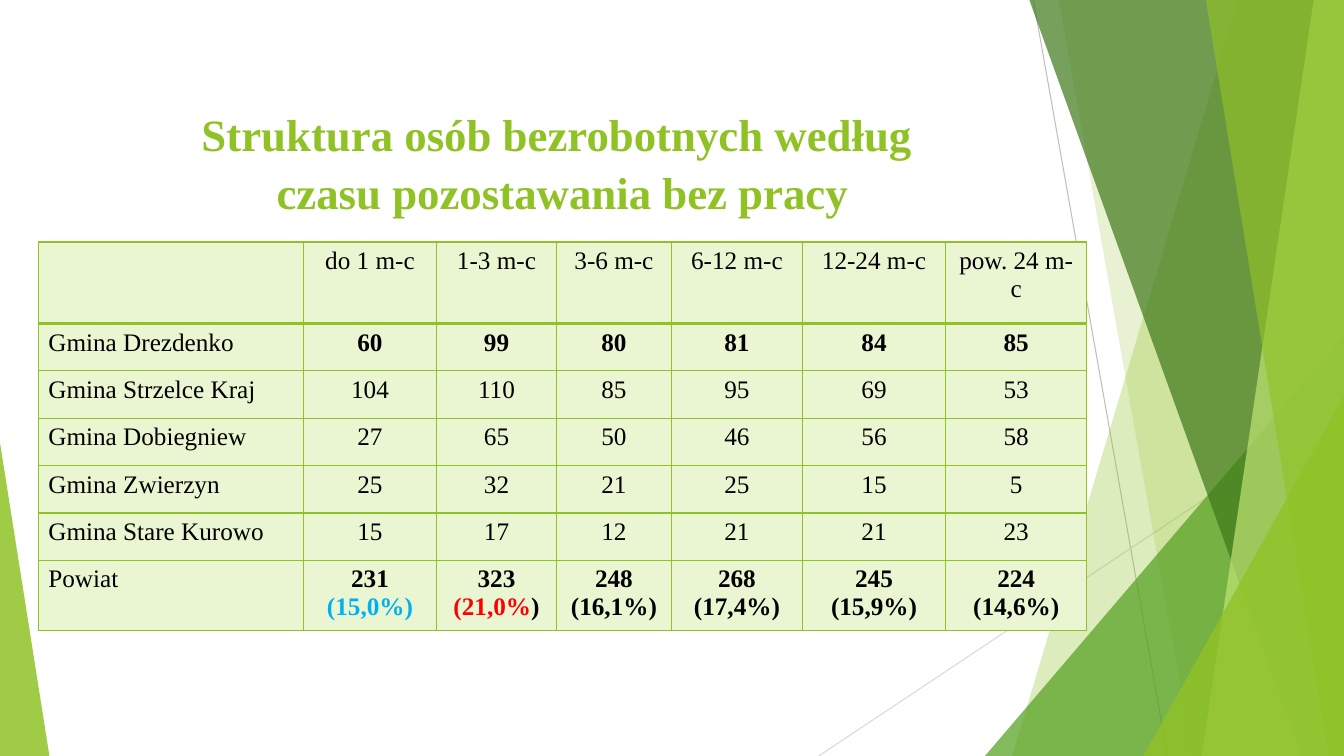
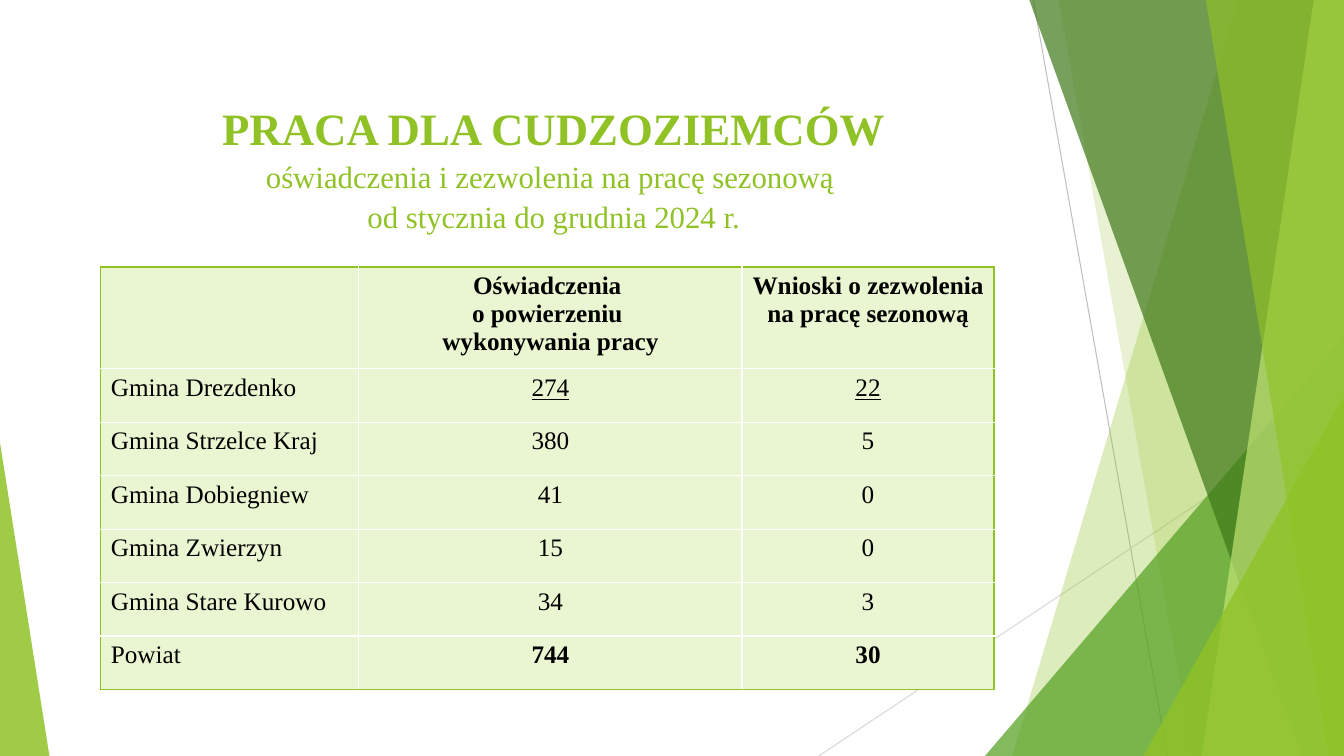
import dataclasses

import lxml.etree
import pptx
import pptx.dml.color
import pptx.enum.shapes
import pptx.enum.text
import pptx.oxml.ns
import pptx.util

COLORS = {
    "lime": "90C226", "green": "54A021", "forest": "3F7819", "pale": "C0E474",
    "cell": "EAF6D1", "white": "FFFFFF", "black": "000000",
    "blue": "00B0F0", "red": "FF0000", "grey": "BFBFBF", "silver": "D9D9D9",
}
FONT = "Times New Roman"
CENTER = pptx.enum.text.PP_ALIGN.CENTER
LEFT = pptx.enum.text.PP_ALIGN.LEFT
qn = pptx.oxml.ns.qn

RAYS = [((76.89, 0), (86.87, 100), "grey"), ((100, 53.73), (60.92, 100), "silver")]
FACETS = [
    ("band", 92.12, 75.32, "lime", 30),
    ("band", 78.77, 88.75, "lime", 20),
    ("corner", (73.29, 44.4, 26.71, 55.6), 1, "green", 72),
    ("band", 76.59, 96.85, "forest", 70),
    ("band", 97.75, 89.42, "pale", 70),
    ("band", 89.72, 98.87, "lime", 65),
    ("corner", (85.07, 52.4, 14.93, 47.6), 1, "lime", 80),
    ("corner", (0, 58.53, 3.68, 41.47), 0, "lime", 85),
]


@dataclasses.dataclass
class Box:
    left: int
    top: int
    width: int
    height: int

    def point(self, x, y):
        return (round(self.left + self.width * x / 100),
                round(self.top + self.height * y / 100))

    def area(self, x, y, width, height):
        return Box(*self.point(x, y), round(self.width * width / 100),
                   round(self.height * height / 100))

    def edges(self):
        return self.left, self.top, self.width, self.height


def rgb(name):
    return pptx.dml.color.RGBColor.from_string(COLORS[name])


def style(para, size, color="black", bold=False, underline=False, align=CENTER):
    para.alignment = align
    for span in para.runs:
        span.font.name = FONT
        span.font.size = pptx.util.Pt(size)
        span.font.bold = bold
        span.font.underline = underline
        span.font.color.rgb = rgb(color)


def paint(shape, color, opacity):
    shape.shadow.inherit = False
    shape.line.fill.background()
    shape.fill.solid()
    shape.fill.fore_color.rgb = rgb(color)
    tint = shape.element.spPr.find(".//" + qn("a:srgbClr"))
    lxml.etree.SubElement(tint, qn("a:alpha"), val=str(opacity * 1000))


def add_ray(page, box, start, end, color):
    ray = page.shapes.add_connector(pptx.enum.shapes.MSO_CONNECTOR.STRAIGHT,
                                    *box.point(*start), *box.point(*end))
    ray.line.color.rgb = rgb(color)
    ray.line.width = pptx.util.Pt(0.75)
    lxml.etree.SubElement(ray.element.spPr, qn("a:effectLst"))


def add_band(page, box, top_x, bottom_x):
    outline = page.shapes.build_freeform(*box.point(top_x, 0), scale=1.0)
    outline.add_line_segments(
        [box.point(100, 0), box.point(100, 100), box.point(bottom_x, 100)], close=True)
    return outline.convert_to_shape()


def add_corner(page, box, shares, apex):
    corner = page.shapes.add_shape(
        pptx.enum.shapes.MSO_SHAPE.ISOSCELES_TRIANGLE, *box.area(*shares).edges())
    corner.adjustments[0] = apex
    return corner


def add_backdrop(page, box):
    for start, end, color in RAYS:
        add_ray(page, box, start, end, color)
    makers = {"band": add_band, "corner": add_corner}
    for kind, first, second, color, opacity in FACETS:
        paint(makers[kind](page, box, first, second), color, opacity)


def add_title(page, box, heading, subtitle=""):
    frame = page.shapes.add_textbox(*box.edges()).text_frame
    frame.word_wrap = True
    frame.vertical_anchor = pptx.enum.text.MSO_ANCHOR.TOP
    frame.text = f"{heading}\n{subtitle}" if subtitle else heading
    for index, para in enumerate(frame.paragraphs):
        para.line_spacing = 1.09
        style(para, 22 if index else 32, "lime", bold=index == 0)


def set_borders(cell, borders):
    properties = cell._tc.get_or_add_tcPr()
    for side in "LRTB":
        color, width = borders[side]
        line = lxml.etree.SubElement(properties, qn(f"a:ln{side}"),
                                     w=str(pptx.util.Pt(width)))
        fill = lxml.etree.SubElement(line, qn("a:solidFill"))
        lxml.etree.SubElement(fill, qn("a:srgbClr"), val=COLORS[color])


def add_grid(page, box, rows, columns, heights, inner, header_rule,
             bold_rows, underlined_rows=()):
    grid = page.shapes.add_table(len(rows), len(columns), *box.edges()).table
    grid.first_row = grid.horz_banding = False
    for column, share in zip(grid.columns, columns):
        column.width = round(box.width * share / sum(columns))
    for row, share in zip(grid.rows, heights):
        row.height = round(box.height * share / sum(heights))
    last_row, last_column = len(rows) - 1, len(columns) - 1
    for y, texts in enumerate(rows):
        for x, text in enumerate(texts):
            cell = grid.cell(y, x)
            set_borders(cell, {
                "L": ("lime" if x == 0 else inner, 1),
                "R": ("lime" if x == last_column else inner, 1),
                "T": ("lime" if y == 0 else inner, header_rule if y == 1 else 1),
                "B": ("lime" if y == last_row else inner, header_rule if y == 0 else 1),
            })
            cell.fill.solid()
            cell.fill.fore_color.rgb = rgb("cell")
            cell.text_frame.text = text
            for para in cell.text_frame.paragraphs:
                style(para, 18, bold=x > 0 and y in bold_rows,
                      underline=x > 0 and y in underlined_rows,
                      align=CENTER if x else LEFT)
    return grid


def duration_slide(page, box):
    add_backdrop(page, box)
    add_title(page, box.area(2.85, 12.8, 78.02, 19.2),
              "Struktura osób bezrobotnych według \vczasu pozostawania bez pracy")
    rows = [
        ["", "do 1 m-c", "1-3 m-c", "3-6 m-c", "6-12 m-c", "12-24 m-c", "pow. 24 m-c"],
        ["Gmina Drezdenko", "60", "99", "80", "81", "84", "85"],
        ["Gmina Strzelce Kraj", "104", "110", "85", "95", "69", "53"],
        ["Gmina Dobiegniew", "27", "65", "50", "46", "56", "58"],
        ["Gmina Zwierzyn", "25", "32", "21", "25", "15", "5"],
        ["Gmina Stare Kurowo", "15", "17", "12", "21", "21", "23"],
        ["Powiat", "231\n(15,0%)", "323\n(21,0%", "248\n(16,1%)", "268\n(17,4%)",
         "245\n(15,9%)", "224 (14,6%)"],
    ]
    grid = add_grid(page, box.area(2.85, 32, 78.02, 50.93), rows,
                    [2.63, 1.32, 1.19, 1.14, 1.3, 1.42, 1.4],
                    [0.81] + [0.47] * 5 + [0.66], "lime", 2, bold_rows=(1, 6))
    shortest, longest = (grid.cell(6, x).text_frame.paragraphs[1] for x in (1, 2))
    style(shortest, 18, "blue", bold=True)
    longest.add_run().text = ")"
    style(longest, 18, bold=True)
    longest.runs[0].font.color.rgb = rgb("red")


def foreigners_slide(page, box):
    add_backdrop(page, box)
    add_title(page, box.area(5.93, 12, 70.52, 19.2), "PRACA DLA CUDZOZIEMCÓW",
              "oświadczenia i zezwolenia na pracę sezonową \vod stycznia do grudnia 2024 r.")
    rows = [
        ["", "Oświadczenia \vo powierzeniu \nwykonywania pracy",
         "Wnioski o zezwolenia na pracę sezonową"],
        ["Gmina Drezdenko", "274", "22"],
        ["Gmina Strzelce Kraj", "380", "5"],
        ["Gmina Dobiegniew", "41", "0"],
        ["Gmina Zwierzyn", "15", "0"],
        ["Gmina Stare Kurowo", "34", "3"],
        ["Powiat", "744", "30"],
    ]
    add_grid(page, box.area(7.5, 35.33, 66.47, 55.87), rows, [2.56, 3.8, 2.5],
             [1.01] + [0.53] * 6, "white", 1, bold_rows=(0, 6), underlined_rows=(1,))


def main():
    deck = pptx.Presentation()
    deck.slide_width = pptx.util.Inches(13.33)
    deck.slide_height = pptx.util.Inches(7.5)
    whole = Box(0, 0, deck.slide_width, deck.slide_height)
    for build in (duration_slide, foreigners_slide):
        build(deck.slides.add_slide(deck.slide_layouts[6]), whole)
    deck.save("out.pptx")


if __name__ == "__main__":
    main()
